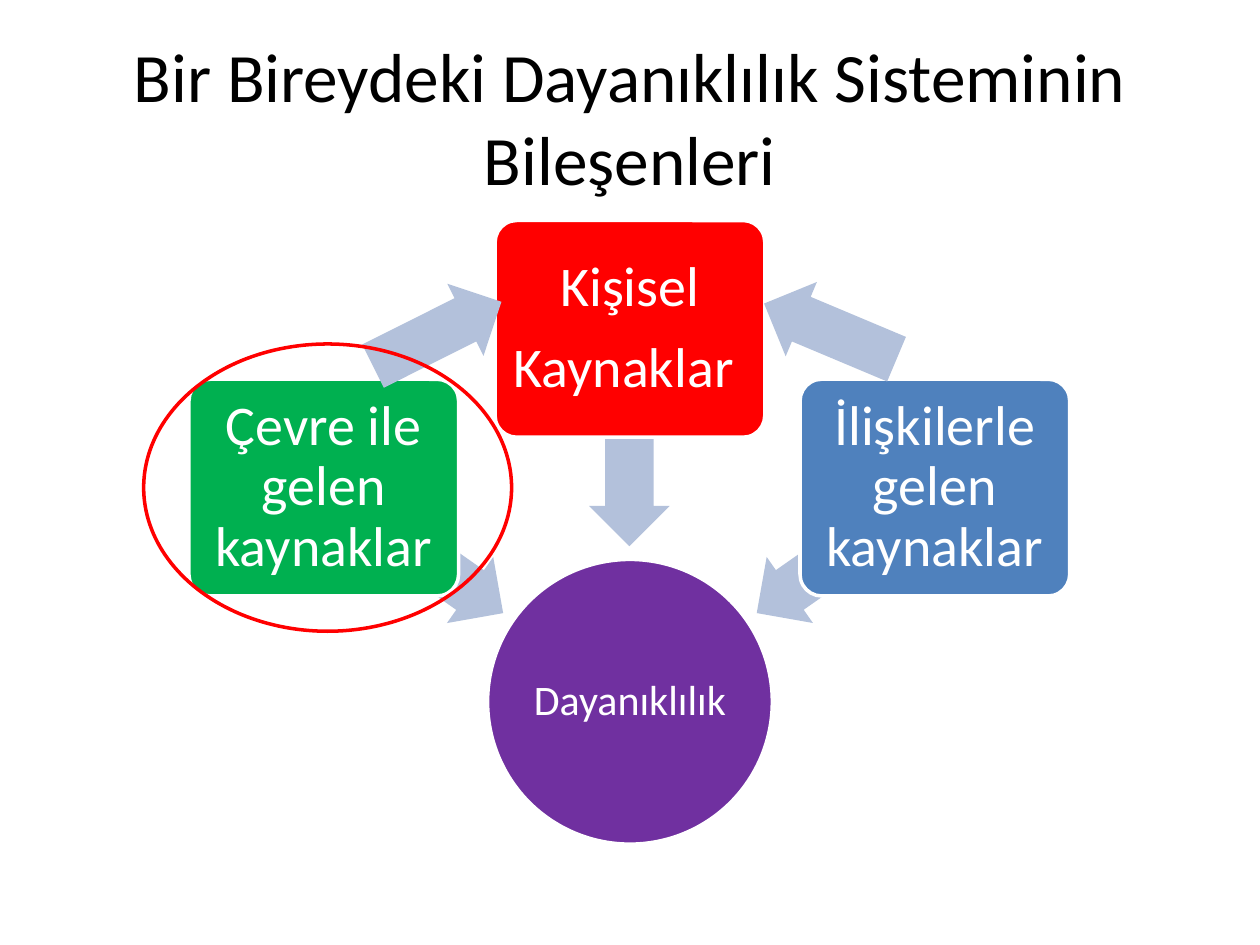
from pptx import Presentation
from pptx.dml.color import RGBColor
from pptx.enum.shapes import MSO_SHAPE
from pptx.enum.text import MSO_ANCHOR, MSO_AUTO_SIZE, PP_ALIGN
from pptx.util import Inches, Pt

BLACK = RGBColor(0x00, 0x00, 0x00)
WHITE = RGBColor(0xFF, 0xFF, 0xFF)
RED = RGBColor(0xFF, 0x00, 0x00)
GREEN = RGBColor(0x00, 0xB0, 0x50)
BLUE = RGBColor(0x4F, 0x81, 0xBD)
PURPLE = RGBColor(0x70, 0x30, 0xA0)
PALE_BLUE = RGBColor(0xB3, 0xC1, 0xDB)

FONT = "Calibri"
ARROW_HEIGHT = 0.64
LONG_ARROW = 1.73
SHORT_ARROW = 1.14


def format_text(frame, size, color):
    """Centre the text and give every run its font."""
    frame.word_wrap = True
    frame.auto_size = MSO_AUTO_SIZE.NONE
    frame.vertical_anchor = MSO_ANCHOR.MIDDLE
    for para in frame.paragraphs:
        para.alignment = PP_ALIGN.CENTER
        for span in para.runs:
            span.font.name = FONT
            span.font.size = Pt(size)
            span.font.color.rgb = color


def add_title(page, text):
    """Fill and place the title placeholder."""
    title = page.shapes.title
    title.left, title.top = Inches(0.5), Inches(0.3)
    title.width, title.height = Inches(9), Inches(1.25)
    title.text_frame.text = text
    format_text(title.text_frame, 39.6, BLACK)


def add_plain_shape(page, kind, left, top, width, height, fill=None, line=None):
    """Add a shape without shadow, with optional fill and outline."""
    shape = page.shapes.add_shape(
        kind, Inches(left), Inches(top), Inches(width), Inches(height))
    shape.shadow.inherit = False
    if fill is None:
        shape.fill.background()
    else:
        shape.fill.solid()
        shape.fill.fore_color.rgb = fill
    if line is None:
        shape.line.fill.background()
    else:
        shape.line.color.rgb = line
        shape.line.width = Pt(2)
    return shape


def write_label(shape, text, size, inset):
    """Write a white label inside a shape."""
    frame = shape.text_frame
    frame.margin_left = frame.margin_right = Inches(inset)
    frame.margin_top = frame.margin_bottom = Inches(inset)
    frame.text = text
    for para in frame.paragraphs:
        para.line_spacing = 0.9
        para.space_after = Pt(size * 0.35)
    format_text(frame, size, WHITE)


def add_resource(page, left, top, text, fill):
    """Add a rounded box naming one resource."""
    box = add_plain_shape(
        page, MSO_SHAPE.ROUNDED_RECTANGLE, left, top, 2.14, 1.72, fill, WHITE)
    box.adjustments[0] = 0.1
    write_label(box, text, 32, 0.07)


def add_arrow(page, left, top, width, rotation):
    """Add a pale block arrow turned to its direction."""
    arrow = add_plain_shape(
        page, MSO_SHAPE.LEFT_ARROW, left, top, width, ARROW_HEIGHT, PALE_BLUE)
    arrow.adjustments[0] = 0.6
    arrow.adjustments[1] = 0.5
    arrow.rotation = rotation


def main():
    """Build the slide and save the deck."""
    deck = Presentation()
    deck.slide_width, deck.slide_height = Inches(10), Inches(7.5)
    page = deck.slides.add_slide(deck.slide_layouts[5])
    add_title(page, "Bir Bireydeki Dayanıklılık Sisteminin Bileşenleri")

    core = add_plain_shape(
        page, MSO_SHAPE.OVAL, 3.87, 4.44, 2.26, 2.26, PURPLE, WHITE)
    write_label(core, "Dayanıklılık", 24, 0.02)

    add_arrow(page, 2.42, 4.05, LONG_ARROW, 215)
    add_resource(page, 1.5, 3.01, "Çevre ile gelen kaynaklar", GREEN)
    add_arrow(page, 4.13, 3.15, LONG_ARROW, 270)
    add_resource(page, 3.93, 1.75, "Kişisel\nKaynaklar ", RED)
    add_arrow(page, 5.85, 4.05, LONG_ARROW, 325)
    add_resource(page, 6.35, 3.01, "İlişkilerle gelen kaynaklar", BLUE)

    add_arrow(page, 2.9, 2.33, SHORT_ARROW, 153.4)
    add_arrow(page, 6.02, 2.31, SHORT_ARROW, 22.8)
    add_plain_shape(page, MSO_SHAPE.OVAL, 1.14, 2.73, 2.92, 2.28, line=RED)
    deck.save("out.pptx")


if __name__ == "__main__":
    main()
